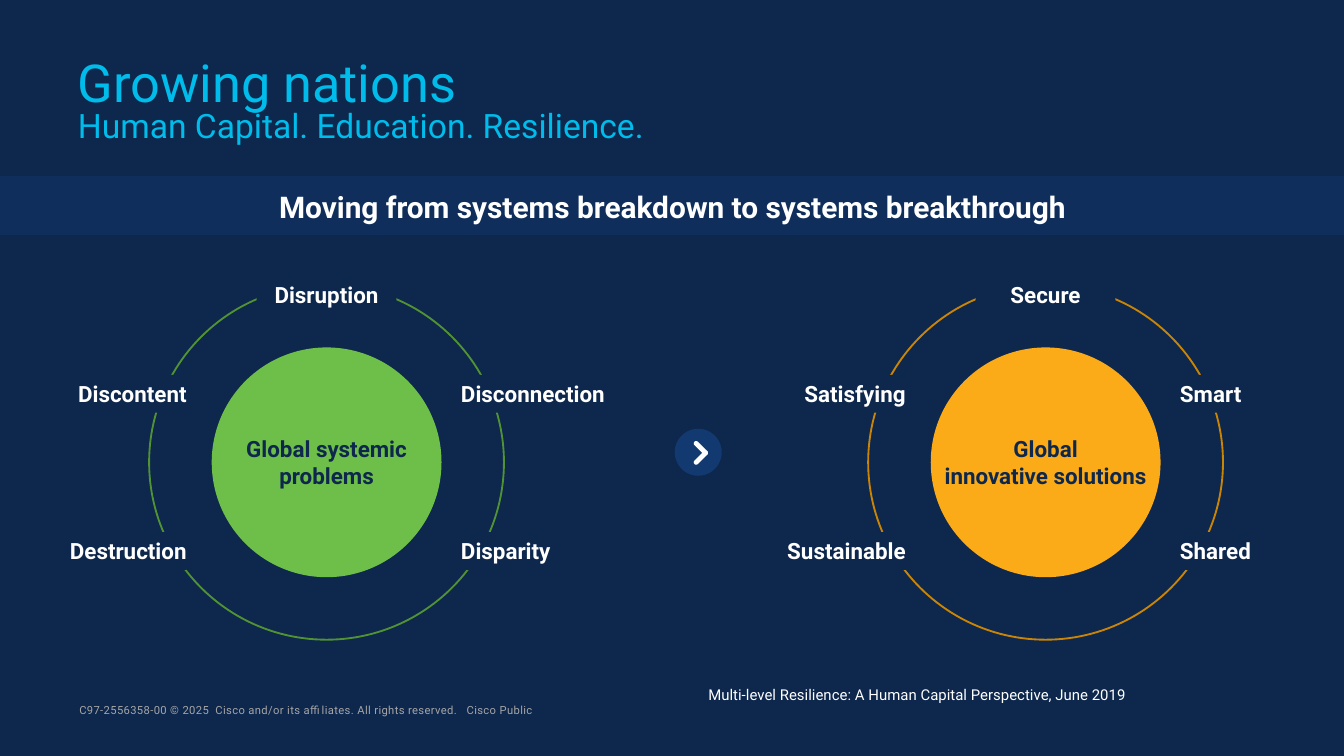
"""Build the "Growing nations" slide on a grid of 100 columns across the slide width."""
import math
from dataclasses import dataclass

from pptx import Presentation, util as u
from pptx.dml.color import RGBColor
from pptx.enum import shapes as kinds, text as t
from pptx.oxml import parse_xml
from pptx.oxml.ns import nsdecls

COLORS = {
    "navy": "0D274D", "blue": "133971", "cyan": "00BCEB", "white": "FFFFFF", "gray": "A6A6A6",
    "green": "6EBE4A", "dark green": "519234", "orange": "FBAB18", "dark orange": "CB8504",
}
WIDTH = u.Inches(10)
HEIGHT = WIDTH * 9 // 16
COLUMN = WIDTH // 100
LEFT, CENTER, RIGHT = t.PP_ALIGN.LEFT, t.PP_ALIGN.CENTER, t.PP_ALIGN.RIGHT
TOP, MIDDLE, BOTTOM = t.MSO_ANCHOR.TOP, t.MSO_ANCHOR.MIDDLE, t.MSO_ANCHOR.BOTTOM
RECT, OVAL = kinds.MSO_SHAPE.RECTANGLE, kinds.MSO_SHAPE.OVAL


@dataclass(frozen=True)
class Box:
    left: float
    top: float
    width: float
    height: float

    def emu(self) -> list[int]:
        return [round(n * COLUMN) for n in (self.left, self.top, self.width, self.height)]


@dataclass(frozen=True)
class Label:
    words: str
    side: int
    row: float
    width: float


@dataclass(frozen=True)
class Cycle:
    center: float
    core: tuple[str, ...]
    fill: str
    ring: str
    labels: tuple[Label, ...]


RING_MIDDLE, RING_RADIUS, CORE_RADIUS = 34.4, 13.2, 8.55
LABEL_HEIGHT, LABEL_OFFSET = 2.8, {-1: -10.4, 1: 10}
TOP_ROW, UPPER_ROW, LOWER_ROW = 20.5, 27.9, 39.6
CYCLES = (
    Cycle(24.3, ("Global systemic", "problems"), "green", "dark green", (
        Label("Discontent", -1, UPPER_ROW, 9.2), Label("Disruption", 0, TOP_ROW, 10.4),
        Label("Disconnection", 1, UPPER_ROW, 12.1), Label("Disparity", 1, LOWER_ROW, 7.8),
        Label("Destruction", -1, LOWER_ROW, 9))),
    Cycle(77.8, ("Global", "innovative solutions"), "orange", "dark orange", (
        Label("Satisfying", -1, UPPER_ROW, 8), Label("Secure", 0, TOP_ROW, 10.4),
        Label("Smart", 1, UPPER_ROW, 6.7), Label("Shared", 1, LOWER_ROW, 8.4),
        Label("Sustainable", -1, LOWER_ROW, 9.4))),
)


def rgb(name: str) -> RGBColor:
    return RGBColor.from_string(COLORS[name])


def write(part, lines, size, color, bold=False, align=LEFT, anchor=TOP, insets=(0, 0), wrap=True):
    """Write lines joined by breaks and return the paragraph."""
    frame = part.text_frame
    frame.auto_size = t.MSO_AUTO_SIZE.NONE
    frame.word_wrap, frame.vertical_anchor = wrap, anchor
    frame.margin_left = frame.margin_right = u.Inches(insets[0])
    frame.margin_top = frame.margin_bottom = u.Inches(insets[1])
    paragraph = frame.paragraphs[0]
    paragraph.alignment = align
    sizes = size if isinstance(size, tuple) else (size,) * len(lines)
    for index, (words, points) in enumerate(zip(lines, sizes)):
        if index:
            paragraph.add_line_break()
        run = paragraph.add_run()
        run.text = words
        run.font.name, run.font.size, run.font.bold = "Roboto", u.Pt(points), bold
        run.font.color.rgb = rgb(color)
    return paragraph


def paint(shape, fill: str | None = None, line: str | None = None):
    """Give a shape its flat fill and outline."""
    shape.shadow.inherit = False
    if fill:
        shape.fill.solid()
        shape.fill.fore_color.rgb = rgb(fill)
    else:
        shape.fill.background()
    if line:
        shape.line.color.rgb, shape.line.width = rgb(line), u.Pt(1)
    else:
        shape.line.fill.background()
    return shape


def draw(slide, kind, box: Box, fill: str | None = None, line: str | None = None):
    """Add a painted preset shape."""
    return paint(slide.shapes.add_shape(kind, *box.emu()), fill, line)


def circle(slide, x: float, y: float, radius: float, fill=None, line=None):
    """Add a circle around a centre."""
    return draw(slide, OVAL, Box(x - radius, y - radius, 2 * radius, 2 * radius), fill, line)


def draw_cycle(slide, cycle: Cycle) -> None:
    """Draw a core, its ring and the labels that interrupt the ring."""
    core = circle(slide, cycle.center, RING_MIDDLE, CORE_RADIUS, cycle.fill)
    write(core, cycle.core, 12, "navy", True, CENTER, MIDDLE, wrap=False)
    circle(slide, cycle.center, RING_MIDDLE, RING_RADIUS, line=cycle.ring)
    for label in cycle.labels:
        left = cycle.center + LABEL_OFFSET.get(label.side, 0) + (label.side - 1) * label.width / 2
        plate = draw(slide, RECT, Box(left, label.row, label.width, LABEL_HEIGHT), "navy")
        align = {-1: RIGHT, 0: CENTER, 1: LEFT}[label.side]
        write(plate, (label.words,), 12, "white", True, align, insets=(0, 0.04))


def draw_bar(slide, tip: tuple[float, float], rise: int, reach=0.7, radius=0.18) -> None:
    """Draw one round-ended arm of the chevron, ending at its tip."""
    tail = (tip[0] - reach, tip[1] + rise * reach)
    heading = math.atan2(tip[1] - tail[1], tip[0] - tail[0])
    points = [
        ((x + radius * math.cos(angle)) * COLUMN, (y + radius * math.sin(angle)) * COLUMN)
        for (x, y), start in ((tip, heading - math.pi / 2), (tail, heading + math.pi / 2))
        for angle in (start + step * math.pi / 12 for step in range(13))
    ]
    outline = slide.shapes.build_freeform(*points[0])
    outline.add_line_segments(points[1:], close=True)
    paint(outline.convert_to_shape(), "white")


def main() -> None:
    deck = Presentation()
    deck.slide_width, deck.slide_height = WIDTH, HEIGHT
    slide = deck.slides.add_slide(deck.slide_layouts[5])
    slide.background.fill.solid()
    slide.background.fill.fore_color.rgb = rgb("navy")

    title = slide.shapes.title
    title.left, title.top, title.width, title.height = Box(4.8, 3.7, 91.3, 8).emu()
    heading = write(title, ("Growing nations", "Human Capital. Education. Resilience."),
                    (28, 18), "cyan", anchor=MIDDLE, insets=(0.1, 0.05))
    heading.line_spacing = 0.8

    band = draw(slide, RECT, Box(0, 13.1, 100, 4.4), "blue")
    band_color = band.fill._xPr.find(".//{*}srgbClr")
    band_color.append(parse_xml(f'<a:alpha {nsdecls("a")} val="40000"/>'))
    message = draw(slide, kinds.MSO_SHAPE.ROUNDED_RECTANGLE, Box(5.7, 13, 88.7, 4.7))
    message.adjustments[0] = 0.5
    write(message, ("Moving from systems breakdown to systems breakthrough",),
          16, "white", True, CENTER, MIDDLE, (0.1, 0.05))

    for cycle in CYCLES:
        draw_cycle(slide, cycle)

    circle(slide, 51.95, 33.65, 1.75, "blue")
    for rise in (-1, 1):
        draw_bar(slide, (52.5, 33.7), rise)

    citation = slide.shapes.add_textbox(*Box(52.7, 51, 32.9, 1.3).emu())
    write(citation, ("Multi-level Resilience: A Human Capital Perspective, June 2019",), 8, "white")
    footer = slide.shapes.add_textbox(*Box(5.2, 51.9, 44.7, 1.7).emu())
    rights = write(
        footer,
        ("C97-2556358-00 © 2025  Cisco and/or its affiliates. All rights reserved.   Cisco Public",),
        6, "gray", anchor=BOTTOM, insets=(0.07, 0.03))
    rights.runs[0]._r.get_or_add_rPr().set("spc", "20")

    deck.save("out.pptx")


if __name__ == "__main__":
    main()
